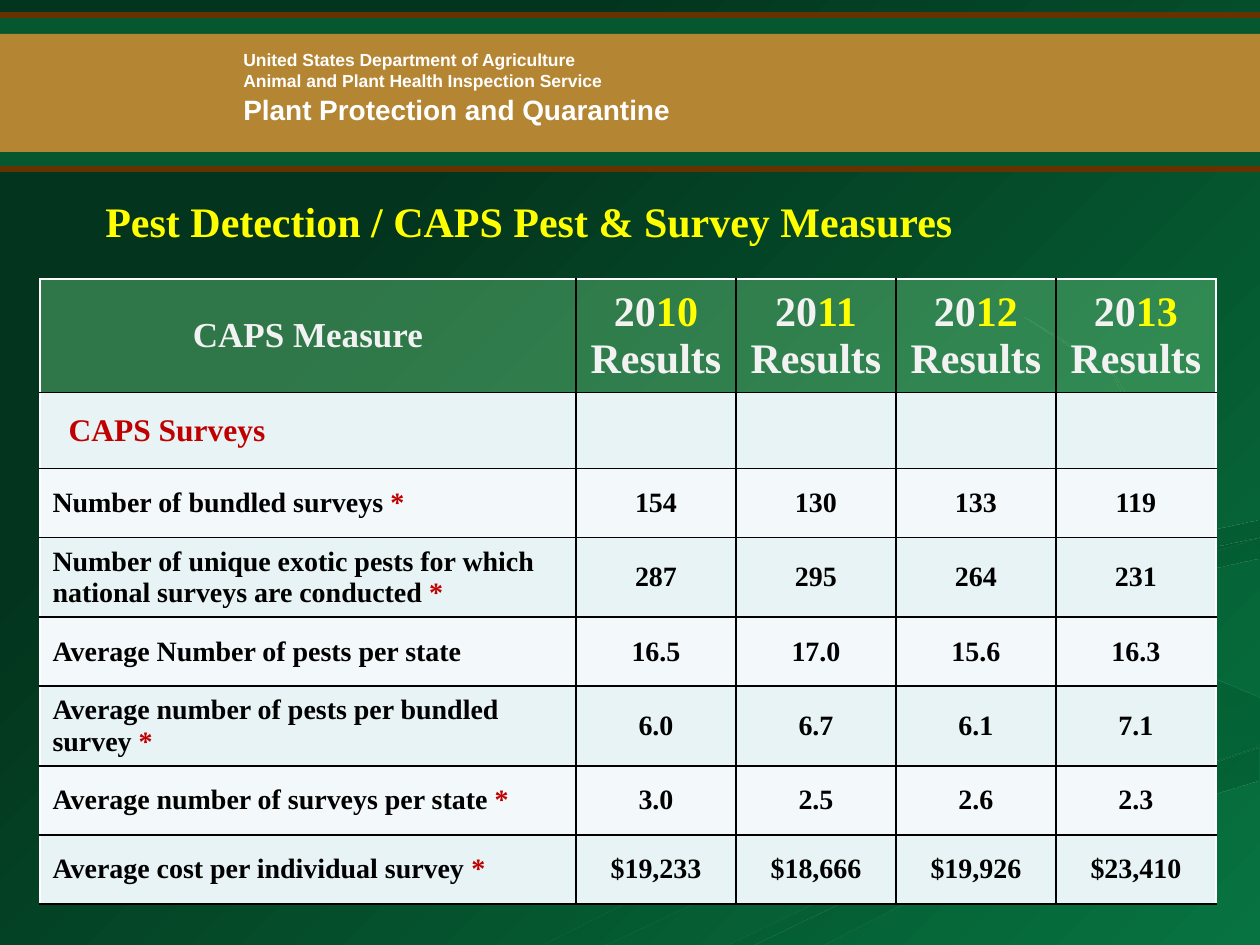
from lxml.etree import SubElement
from pptx import Presentation
from pptx.dml.color import RGBColor
from pptx.enum.shapes import MSO_CONNECTOR, MSO_SHAPE
from pptx.enum.text import MSO_ANCHOR, PP_ALIGN
from pptx.oxml import parse_xml
from pptx.oxml.ns import nsdecls, qn
from pptx.util import Pt

PIXEL = 914400 / 126
WIDTH, HEIGHT = 1260, 945
SERIF, SANS = "Times New Roman", "Arial"

WHITE = RGBColor(0xFF, 0xFF, 0xFF)
BLACK = RGBColor(0, 0, 0)
YELLOW = RGBColor(0xFF, 0xFF, 0)
RED = RGBColor(0xC0, 0, 0)
PALE = RGBColor(0xF2, 0xF2, 0xF2)
DARK_GREEN = RGBColor(0x03, 0x34, 0x1D)
BRIGHT_GREEN = RGBColor(0x07, 0x73, 0x40)
BAND_GREEN = RGBColor(0x05, 0x57, 0x30)
SWIRL_GREEN = RGBColor(0x03, 0x59, 0x30)
HEADER_GREEN = RGBColor(0x64, 0xC4, 0x7B)
ORANGE = RGBColor(0xFF, 0x99, 0x33)
BROWN = RGBColor(0x66, 0x33, 0)
ROW_FILLS = (RGBColor(0xE7, 0xF3, 0xF4), RGBColor(0xF3, 0xF9, 0xFA))

YEARS = ("10", "11", "12", "13")
MEASURES = [
    ("Number of bundled surveys ", "*", ("154", "130", "133", "119")),
    ("Number of unique exotic pests for which national surveys are conducted ", "*",
     ("287", "295", "264", "231")),
    ("Average Number of pests per state", "", ("16.5", "17.0", "15.6", "16.3")),
    ("Average number of pests per bundled survey ", "*", ("6.0", "6.7", "6.1", "7.1")),
    ("Average number of surveys per state ", "*", ("3.0", "2.5", "2.6", "2.3")),
    ("Average cost per individual survey ", "*",
     ("$19,233", "$18,666", "$19,926", "$23,410")),
]
COLUMN_WIDTHS = [536] + [160] * len(YEARS)
ROW_HEIGHTS = [63, 76] + [69] * len(MEASURES)

SWIRLS = [
    [(825, 605), (1042, 730), (747, 842), (543, 945), (606, 945), (814, 847), (1056, 747)],
    [(978, 610), (1071, 688), (1177, 747), (1152, 775), (1202, 736), (1108, 680)],
    [(752, 945), (822, 945), (977, 866), (1259, 781), (1259, 747), (949, 851)],
    [(979, 610), (1202, 736), (958, 834), (726, 945), (752, 945), (949, 851), (1260, 747),
     (1260, 698), (1038, 605), (1260, 538), (1260, 520), (1011, 573)],
    [(1037, 605), (1082, 648), (1085, 597), (1259, 559), (1259, 538), (1079, 575)],
    [(941, 561), (1121, 512), (1162, 455), (1109, 369), (1024, 318), (1111, 374),
     (1154, 460), (1026, 520), (830, 599), (877, 645), (848, 602)],
]


def px(*lengths):
    return [round(length * PIXEL) for length in lengths]


def set_opacity(element, *percents):
    for color, percent in zip(element.iter(qn("a:srgbClr")), percents):
        SubElement(color, qn("a:alpha")).set("val", str(percent * 1000))


def set_gradient(fill, angle, *stops):
    fill.gradient()
    fill.gradient_angle = angle
    for stop, (position, color) in zip(fill.gradient_stops, stops):
        stop.position = position
        stop.color.rgb = color


def add_run(paragraph, text, size, color, font=SERIF):
    run = paragraph.add_run()
    run.text = text
    run.font.name = font
    run.font.size = Pt(size)
    run.font.bold = True
    run.font.color.rgb = color


def add_band(slide, top, height, color, opacity=100):
    shape = slide.shapes.add_shape(MSO_SHAPE.RECTANGLE, *px(0, top, WIDTH, height))
    shape.shadow.inherit = False
    shape.fill.solid()
    shape.fill.fore_color.rgb = color
    shape.line.fill.background()
    if opacity < 100:
        set_opacity(shape._element.spPr, opacity)


def add_rule(slide, y):
    line = slide.shapes.add_connector(MSO_CONNECTOR.STRAIGHT, *px(0, y, WIDTH, y))
    line.line.color.rgb = BROWN
    line.line.width = Pt(3)
    SubElement(line._element.spPr, qn("a:effectLst"))


def add_swirl(slide, points):
    builder = slide.shapes.build_freeform(*points[0], scale=PIXEL)
    builder.add_line_segments(points[1:], close=True)
    shape = builder.convert_to_shape()
    shape.shadow.inherit = False
    shape.line.fill.background()
    set_gradient(shape.fill, 270, (0, SWIRL_GREEN), (1, BAND_GREEN))
    set_opacity(shape._element.spPr, 59, 20)


def add_text(slide, box, lines, color, font, spacing=None):
    text_frame = slide.shapes.add_textbox(*px(*box)).text_frame
    text_frame.word_wrap = True
    for index, (text, size) in enumerate(lines):
        paragraph = text_frame.add_paragraph() if index else text_frame.paragraphs[0]
        if spacing:
            paragraph.line_spacing = spacing
        if index:
            paragraph.space_before = Pt(size / 2)
        add_run(paragraph, text, size, color, font)


def set_borders(cell, colors):
    properties = cell._tc.get_or_add_tcPr()
    for index, (side, color) in enumerate(zip("LRTB", colors)):
        properties.insert(index, parse_xml(
            f'<a:ln{side} {nsdecls("a")} w="12700"><a:solidFill>'
            f'<a:srgbClr val="{color}"/></a:solidFill></a:ln{side}>'))


def fill_cell(cell, runs, color, opacity=100, centered=True, indent=0):
    cell.vertical_anchor = MSO_ANCHOR.MIDDLE
    cell.fill.solid()
    cell.fill.fore_color.rgb = color
    if opacity < 100:
        set_opacity(cell._tc.tcPr, opacity)
    paragraph = cell.text_frame.paragraphs[0]
    paragraph.alignment = PP_ALIGN.CENTER if centered else PP_ALIGN.LEFT
    if indent:
        paragraph._p.get_or_add_pPr().set("marL", str(px(indent)[0]))
    for run in runs:
        add_run(paragraph, *run)


def add_measures_table(slide):
    frame = slide.shapes.add_table(
        len(ROW_HEIGHTS), len(COLUMN_WIDTHS),
        *px(40, 279, sum(COLUMN_WIDTHS), sum(ROW_HEIGHTS)))
    table = frame.table
    table.first_row = table.horz_banding = False
    for column, width in zip(table.columns, px(*COLUMN_WIDTHS)):
        column.width = width
    for row, height in zip(table.rows, px(*ROW_HEIGHTS)):
        row.height = height

    fill_cell(table.cell(0, 0), [("CAPS Measure", 20, PALE)], HEADER_GREEN, 46)
    fill_cell(table.cell(1, 0), [("CAPS Surveys", 18, RED)], ROW_FILLS[0],
              centered=False, indent=16)
    for column, year in enumerate(YEARS, 1):
        runs = [("20", 24, PALE), (year + " ", 24, YELLOW), ("Results", 24, PALE)]
        fill_cell(table.cell(0, column), runs, HEADER_GREEN, 46)
        fill_cell(table.cell(1, column), [], ROW_FILLS[0])
    for row, (label, mark, values) in enumerate(MEASURES, 2):
        color = ROW_FILLS[(row - 1) % 2]
        runs = [(label, 16, BLACK)] + ([(mark, 16, RED)] if mark else [])
        fill_cell(table.cell(row, 0), runs, color, centered=False)
        for column, value in enumerate(values, 1):
            fill_cell(table.cell(row, column), [(value, 16, BLACK)], color)

    last_column = len(COLUMN_WIDTHS) - 1
    for row in range(len(ROW_HEIGHTS)):
        for column in range(len(COLUMN_WIDTHS)):
            outer = (column == 0, column == last_column, row == 0, False)
            set_borders(table.cell(row, column), [WHITE if edge else BLACK for edge in outer])


def main():
    presentation = Presentation()
    presentation.slide_width, presentation.slide_height = px(WIDTH, HEIGHT)
    slide = presentation.slides.add_slide(presentation.slide_layouts[6])
    set_gradient(slide.background.fill, 315, (0.26, DARK_GREEN), (1, BRIGHT_GREEN))
    add_band(slide, 14, 157, BAND_GREEN)
    add_band(slide, 34, 118, ORANGE, 70)
    add_text(slide, (231, 50, 567, 86),
             [("United States Department of Agriculture", 10),
              ("Animal and Plant Health Inspection Service", 10),
              ("Plant Protection and Quarantine", 16)], WHITE, SANS, 0.6)
    for y in (169, 15):
        add_rule(slide, y)
    for points in SWIRLS:
        add_swirl(slide, points)
    add_text(slide, (93, 189, 1072, 79),
             [("Pest Detection / CAPS Pest & Survey Measures", 24)], YELLOW, SERIF)
    add_measures_table(slide)
    presentation.save("out.pptx")


if __name__ == "__main__":
    main()
